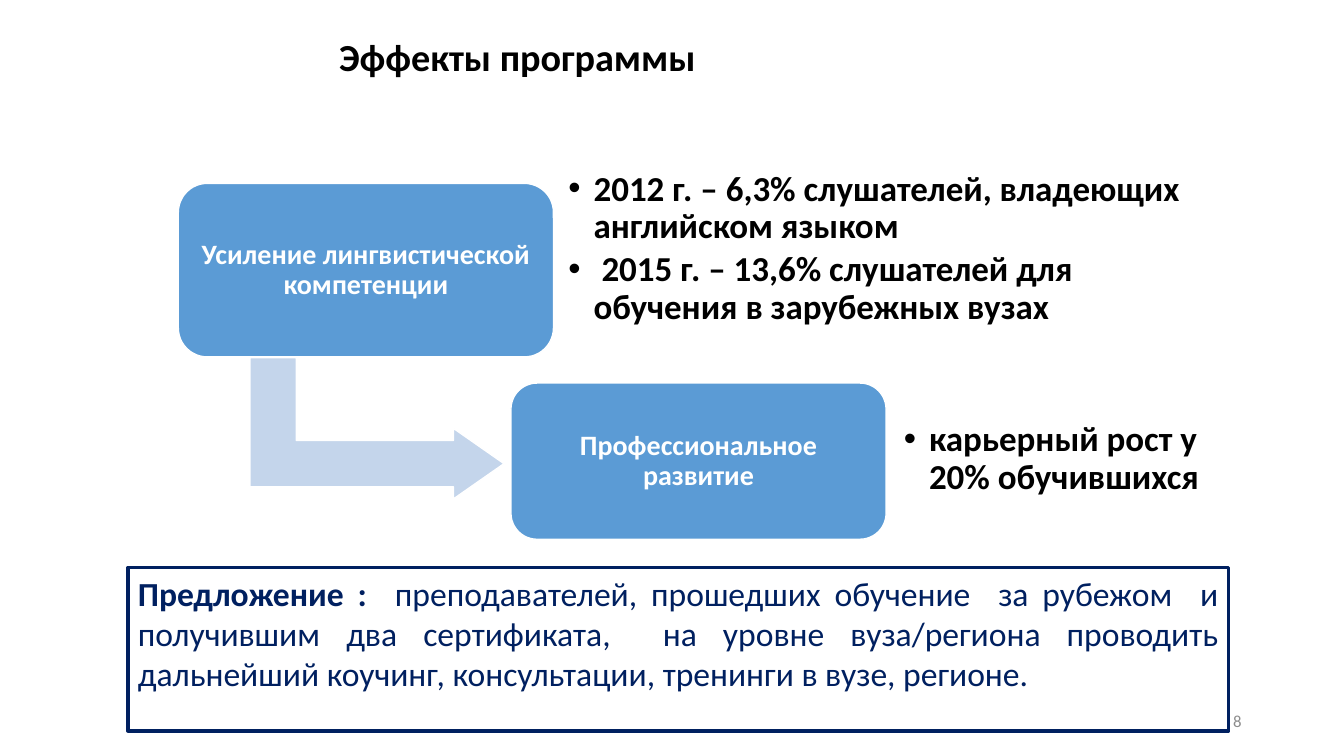
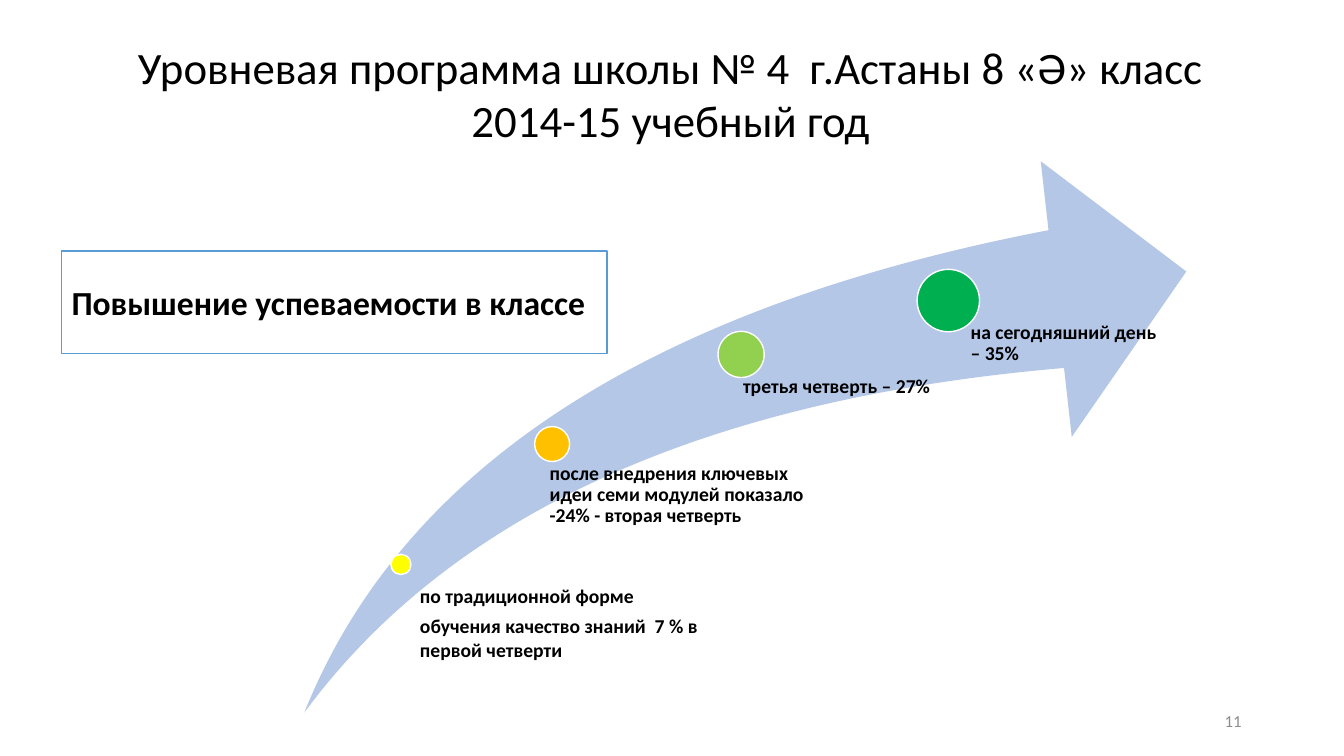
from lxml import etree
from pptx import Presentation
from pptx.dml.color import RGBColor
from pptx.enum.shapes import MSO_SHAPE
from pptx.enum.text import MSO_ANCHOR, MSO_AUTO_SIZE, PP_ALIGN
from pptx.oxml.ns import qn
from pptx.util import Pt

BLACK = RGBColor(0x00, 0x00, 0x00)
WHITE = RGBColor(0xFF, 0xFF, 0xFF)
NAVY = RGBColor(0x00, 0x20, 0x60)
BLUE = RGBColor(0x5B, 0x9B, 0xD5)
ELBOW_BLUE = RGBColor(0xC4, 0xD5, 0xEB)
SWOOSH_BLUE = RGBColor(0xB4, 0xC7, 0xE7)
GREY = RGBColor(0x8C, 0x8C, 0x8C)
YELLOW = RGBColor(0xFF, 0xFF, 0x00)
ORANGE = RGBColor(0xFF, 0xC0, 0x00)
LIME = RGBColor(0x92, 0xD0, 0x50)
GREEN = RGBColor(0x00, 0xB0, 0x50)

RECTANGLE, ROUNDED = MSO_SHAPE.RECTANGLE, MSO_SHAPE.ROUNDED_RECTANGLE
ELLIPSE, SWOOSH, ELBOW = MSO_SHAPE.OVAL, MSO_SHAPE.SWOOSH_ARROW, MSO_SHAPE.BENT_UP_ARROW
TOP, MIDDLE, BOTTOM = MSO_ANCHOR.TOP, MSO_ANCHOR.MIDDLE, MSO_ANCHOR.BOTTOM
LEFT, CENTER, RIGHT, JUSTIFY = PP_ALIGN.LEFT, PP_ALIGN.CENTER, PP_ALIGN.RIGHT, PP_ALIGN.JUSTIFY

FONT = "Calibri"
SLIDE_SIZE = (960, 540)
NUMBER_BOX = (678, 500.4, 216, 28.8)
DEFAULT_INSETS = (7.2, 3.6, 7.2, 3.6)
TITLE_ONLY, TWO_CONTENT = 5, 3


def set_values(target, **values):
    for name, value in values.items():
        setattr(target, name, value)


def place(shape, box):
    left, top, width, height = (Pt(value) for value in box)
    set_values(shape, left=left, top=top, width=width, height=height)


def write(shape, paragraphs, size, color=BLACK, bold=False, align=LEFT, anchor=TOP,
          insets=DEFAULT_INSETS, spacing=1.0, after=0):
    """Fill a shape; a paragraph is a string or a list of (text, bold) spans."""
    frame = shape.text_frame
    left, top, right, bottom = (Pt(value) for value in insets)
    set_values(frame, word_wrap=True, auto_size=MSO_AUTO_SIZE.NONE, vertical_anchor=anchor,
               margin_left=left, margin_top=top, margin_right=right, margin_bottom=bottom)
    for index, content in enumerate(paragraphs):
        para = frame.add_paragraph() if index else frame.paragraphs[0]
        set_values(para, alignment=align, line_spacing=spacing,
                   space_before=Pt(0), space_after=Pt(after))
        spans = [(content, bold)] if isinstance(content, str) else content
        for text, span_bold in spans:
            span = para.add_run()
            span.text = text
            set_values(span.font, name=FONT, size=Pt(size), bold=span_bold)
            span.font.color.rgb = color


def add_text(page, box, paragraphs, **formatting):
    shape = page.shapes.add_textbox(*(Pt(value) for value in box))
    write(shape, paragraphs, **formatting)


def add_figure(page, kind, box, fill=None, line=None, line_width=1, adjustments=()):
    shape = page.shapes.add_shape(kind, *(Pt(value) for value in box))
    shape.shadow.inherit = False
    for index, value in enumerate(adjustments):
        shape.adjustments[index] = value
    if fill is None:
        shape.fill.background()
    else:
        shape.fill.solid()
        shape.fill.fore_color.rgb = fill
    if line is None:
        shape.line.fill.background()
    else:
        shape.line.color.rgb = line
        shape.line.width = Pt(line_width)
    return shape


def add_page(deck, layout, number, title, box, **formatting):
    page = deck.slides.add_slide(deck.slide_layouts[layout])
    place(page.shapes.title, box)
    write(page.shapes.title, title, align=CENTER, **formatting)
    add_text(page, NUMBER_BOX, [number], size=12, color=GREY, align=RIGHT, anchor=MIDDLE)
    return page


def add_card(page, box, text):
    card = add_figure(page, ROUNDED, box, BLUE, WHITE, adjustments=[0.167])
    write(card, [text], size=20, color=WHITE, bold=True, align=CENTER, anchor=MIDDLE,
          insets=(6,) * 4, spacing=0.9, after=7)


def fill_list(placeholder, box, items):
    place(placeholder, box)
    write(placeholder, items, size=25, bold=True, anchor=MIDDLE, insets=(7,) * 4,
          spacing=0.9, after=3.75)
    for para in placeholder.text_frame.paragraphs:
        properties = para._p.get_or_add_pPr()
        properties.set("marL", str(Pt(18)))
        properties.set("indent", str(-Pt(18)))
        etree.SubElement(properties, qn("a:buChar")).set("char", "•")


def add_elbow_arrow(page, box):
    """Draw an arrow that goes down and then right within the box."""
    left, top, width, height = box
    shift = (width - height) / 2
    unturned = (left + shift, top - shift, height, width)
    arrow = add_figure(page, ELBOW, unturned, ELBOW_BLUE, WHITE,
                       adjustments=[0.328, 0.25, 0.358])
    arrow.rotation = 90


def add_proposal(page, box):
    frame = add_figure(page, RECTANGLE, box, line=NAVY, line_width=2.5)
    write(frame, [[
        ("Предложение :  ", True),
        ("преподавателей, прошедших обучение  за рубежом  и получившим два сертификата,  "
         "на уровне вуза/региона проводить дальнейший коучинг, консультации, "
         "тренинги в вузе, регионе.", False),
    ]], size=24, color=NAVY, align=JUSTIFY)


def add_effects_page(deck):
    page = add_page(deck, TWO_CONTENT, "8", ["Эффекты программы"], (133, 9.4, 473, 51),
                    size=27.3, bold=True, anchor=BOTTOM, spacing=0.9)
    add_elbow_arrow(page, (178.6, 255.6, 181.4, 100.8))
    add_card(page, (127.4, 131, 268, 124), "Усиление лингвистической компетенции")
    add_card(page, (365, 273.6, 268, 111.6), "Профессиональное развитие")
    fill_list(page.placeholders[1], (399, 70.6, 473, 214.6), [
        "2012 г. – 6,3% слушателей, владеющих английском языком",
        " 2015 г. – 13,6% слушателей для обучения в зарубежных вузах",
    ])
    fill_list(page.placeholders[2], (638.6, 252, 229, 152),
              ["карьерный рост у 20% обучившихся"])
    add_proposal(page, (91.4, 405.4, 786.2, 116.6))


def add_growth_arrow(page, box):
    """Draw the rising arrow; dots sit relative to it and labels relative to their dots."""
    left, top = box[:2]
    add_figure(page, SWOOSH, box, SWOOSH_BLUE, adjustments=[0.25, 0.25])
    # dot x, dot y, diameter, colour, label box, label inset, line spacing, label
    milestones = [
        (69, 288, 14.4, YELLOW, (5.7, 13.7, 234.7, 75), 7.9, 1.0,
         ["по традиционной форме", "обучения качество знаний  7 % в первой четверти"]),
        (177, 202, 25, ORANGE, (-15.5, 14, 216.7, 88.6), 13.7, 0.9,
         ["после внедрения ключевых идеи семи модулей показало -24% - вторая четверть"]),
        (312, 138, 33, LIME, (-16.6, 15.9, 171.4, 243.4), 18, 0.9,
         ["третья четверть – 27%"]),
        (460, 99.5, 44.6, GREEN, (-7.9, 15.8, 160.6, 282.2), 23.8, 0.9,
         ["на сегодняшний день – 35%"]),
    ]
    for x, y, diameter, color, label_box, inset, spacing, label in milestones:
        center_x, center_y = left + x, top + y
        dot_box = (center_x - diameter / 2, center_y - diameter / 2, diameter, diameter)
        add_figure(page, ELLIPSE, dot_box, color, WHITE)
        label_x, label_y, width, height = label_box
        add_text(page, (center_x + label_x, center_y + label_y, width, height), label,
                 size=14, bold=True, insets=(inset, 0, 0, 0), spacing=spacing, after=4.9)


def add_caption(page, box, text):
    caption = add_figure(page, RECTANGLE, box, WHITE, BLUE)
    write(caption, [text], size=24, bold=True, anchor=MIDDLE)


def add_progress_page(deck):
    title = ["Уровневая программа школы № 4  г.Астаны 8 «Ә» класс", "2014-15 учебный год"]
    page = add_page(deck, TITLE_ONLY, "11", title, (26.6, 24.5, 905, 85), size=32)
    add_growth_arrow(page, (217.4, 115.2, 630, 393.8))
    add_caption(page, (44, 179.3, 389.5, 73.4), "Повышение успеваемости в классе")


def main():
    deck = Presentation()
    deck.slide_width, deck.slide_height = (Pt(value) for value in SLIDE_SIZE)
    add_effects_page(deck)
    add_progress_page(deck)
    deck.save("out.pptx")


if __name__ == "__main__":
    main()
